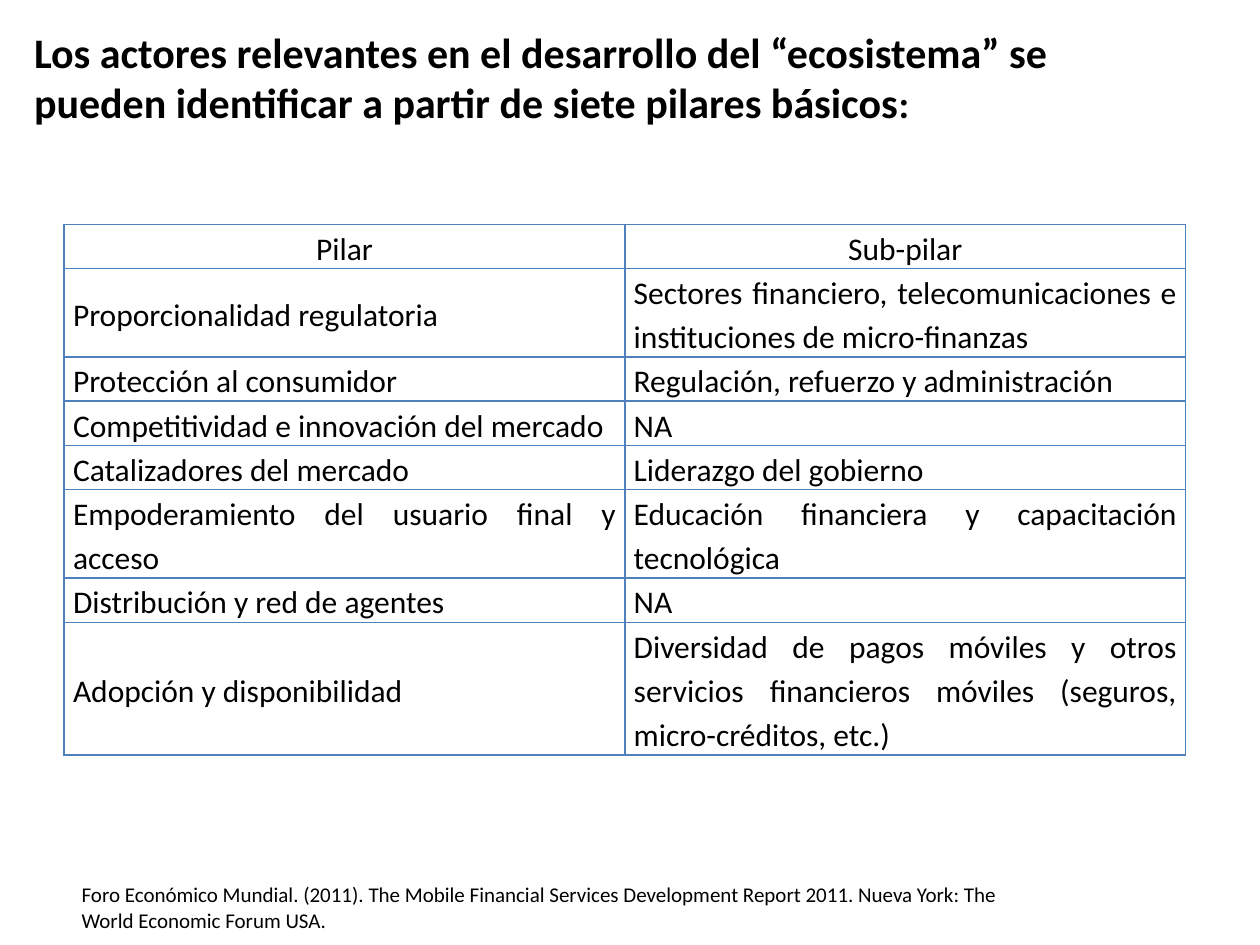
import pptx
import pptx.util
import pptx.dml.color
import pptx.enum.text
from lxml import etree

Inches, Pt = pptx.util.Inches, pptx.util.Pt
ALIGN = pptx.enum.text.PP_ALIGN
A = "http://schemas.openxmlformats.org/drawingml/2006/main"
FONT, BLACK, BLUE = "Calibri", "000000", "4F81BD"

TITLE = [
    ("Los actores relevantes en el desarrollo del “ecosistema” se pueden "
     "identificar a partir de siete pilares básicos", 24),
    (":", 22),
]
SOURCE = [
    ("Foro Económico Mundial. (2011). The Mobile Financial Services Development "
     "Report 2011. Nueva York: The World Economic Forum USA.", 12),
]
ROWS = [
    ("Pilar", "Sub-pilar", 1),
    ("Proporcionalidad regulatoria",
     "Sectores financiero, telecomunicaciones e instituciones de micro-finanzas", 2),
    ("Protección al consumidor", "Regulación, refuerzo y administración", 1),
    ("Competitividad e innovación del mercado", "NA", 1),
    ("Catalizadores del mercado", "Liderazgo del gobierno", 1),
    ("Empoderamiento del usuario final y acceso",
     "Educación financiera y capacitación tecnológica", 2),
    ("Distribución y red de agentes", "NA", 1),
    ("Adopción y disponibilidad",
     "Diversidad de pagos móviles y otros servicios financieros móviles "
     "(seguros, micro-créditos, etc.)", 3),
]
LINE_H, COL_W = 0.35, 4.45


def color(value):
    return pptx.dml.color.RGBColor.from_string(value)


def add_run(p, text, size, bold=False):
    r = p.add_run()
    r.text = text
    r.font.name = FONT
    r.font.size = Pt(size)
    r.font.bold = bold
    r.font.color.rgb = color(BLACK)


def add_text(s, box, runs, bold=False, inset=None):
    tf = s.shapes.add_textbox(*map(Inches, box)).text_frame
    tf.word_wrap = True
    if inset is not None:
        tf.margin_left = tf.margin_right = tf.margin_top = tf.margin_bottom = Inches(inset)
    for text, size in runs:
        add_run(tf.paragraphs[0], text, size, bold)


def set_borders(cell):
    tcPr = cell._tc.get_or_add_tcPr()
    for i, side in enumerate(("lnL", "lnR", "lnT", "lnB")):
        ln = etree.Element(f"{{{A}}}{side}", w=str(Pt(1)))
        fill = etree.SubElement(ln, f"{{{A}}}solidFill")
        etree.SubElement(fill, f"{{{A}}}srgbClr", val=BLUE)
        tcPr.insert(i, ln)


def fill_cell(cell, text, align):
    cell.fill.background()
    set_borders(cell)
    cell.vertical_anchor = pptx.enum.text.MSO_ANCHOR.MIDDLE
    cell.margin_left = cell.margin_right = Inches(0.07)
    cell.margin_top = cell.margin_bottom = 0
    p = cell.text_frame.paragraphs[0]
    p.alignment = align
    p.line_spacing = 1.15
    add_run(p, text, 18)


def add_pillars(s):
    height = LINE_H * sum(lines for *_, lines in ROWS)
    table = s.shapes.add_table(len(ROWS), 2, Inches(0.51), Inches(1.78),
                               Inches(2 * COL_W), Inches(height)).table
    table.first_row = table.horz_banding = False
    for col in table.columns:
        col.width = Inches(COL_W)
    for i, (*texts, lines) in enumerate(ROWS):
        table.rows[i].height = Inches(LINE_H * lines)
        for j, text in enumerate(texts):
            fill_cell(table.cell(i, j), text, ALIGN.JUSTIFY if i else ALIGN.CENTER)


def main():
    prs = pptx.Presentation()
    prs.slide_width, prs.slide_height = Inches(10), Inches(7.5)
    s = prs.slides.add_slide(prs.slide_layouts[6])
    add_pillars(s)
    add_text(s, (0.27, 0.21, 8.95, 0.81), TITLE, bold=True, inset=0)
    add_text(s, (0.55, 6.95, 7.76, 0.5), SOURCE)
    prs.save("out.pptx")


if __name__ == "__main__":
    main()
